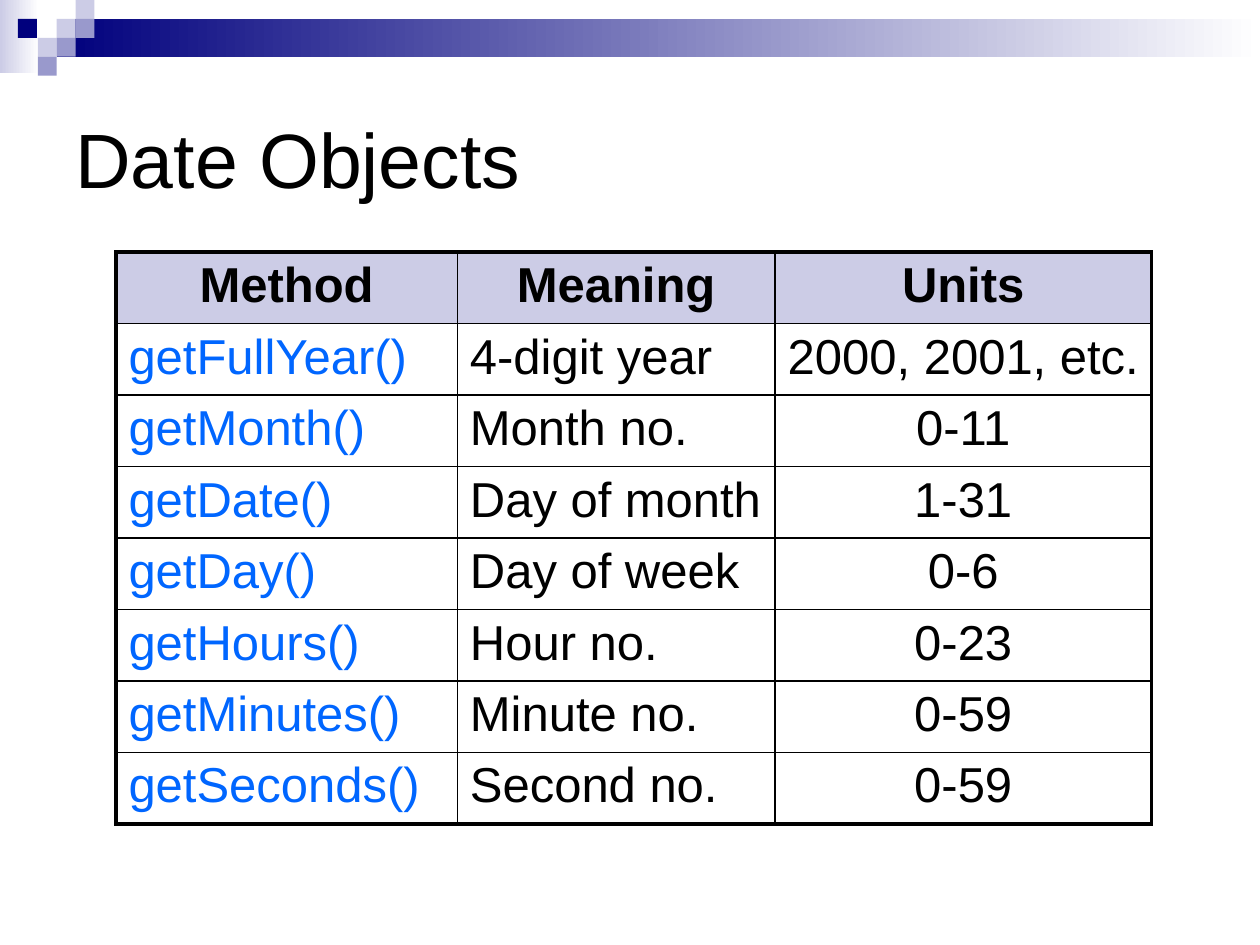
import pptx
import pptx.dml.color
import pptx.enum.shapes
import pptx.enum.text
import pptx.oxml.ns
import pptx.util
from lxml import etree

COLORS = {
    "navy": "00007D",
    "violet": "9999CC",
    "lavender": "CCCCE6",
    "white": "FFFFFF",
    "black": "000000",
    "blue": "0066FF",
}
GRID = 0.05  # inches per column and per row of the layout grid
LEFT = pptx.enum.text.PP_ALIGN.LEFT
CENTER = pptx.enum.text.PP_ALIGN.CENTER


def color(name):
    return pptx.dml.color.RGBColor.from_string(COLORS[name])


def grid(*cells):
    return [pptx.util.Inches(cell * GRID) for cell in cells]


class SlideBuilder:
    font = "Arial"
    thin, thick = 1, 2.25

    def __init__(self, deck):
        self.page = deck.slides.add_slide(deck.slide_layouts[6])

    def rectangle(self, place, fill, fade_to=None):
        shape = self.page.shapes.add_shape(
            pptx.enum.shapes.MSO_SHAPE.RECTANGLE, *grid(*place))
        shape.shadow.inherit = False
        shape.line.fill.background()
        if fade_to:
            shape.fill.gradient()
            shape.fill.gradient_angle = 0
            for stop, name in zip(shape.fill.gradient_stops, (fill, fade_to)):
                stop.color.rgb = color(name)
        else:
            shape.fill.solid()
            shape.fill.fore_color.rgb = color(fill)

    def add_text(self, frame, text, size, name="black", align=LEFT, bold=False):
        para = frame.paragraphs[0]
        para.alignment = align
        span = para.add_run()
        span.text = text
        formats = {"name": self.font, "size": pptx.util.Pt(size), "bold": bold}
        for key, value in formats.items():
            setattr(span.font, key, value)
        span.font.color.rgb = color(name)

    def title(self, place, text, size):
        frame = self.page.shapes.add_textbox(*grid(*place)).text_frame
        frame.word_wrap = True
        frame.vertical_anchor = pptx.enum.text.MSO_ANCHOR.MIDDLE
        self.add_text(frame, text, size)

    def borders(self, cell, outer):
        properties = cell._tc.get_or_add_tcPr()
        for side in ("L", "R", "T", "B"):
            width = self.thick if outer[side] else self.thin
            line = etree.SubElement(properties, pptx.oxml.ns.qn("a:ln" + side),
                                    w=str(pptx.util.Pt(width)))
            fill = etree.SubElement(line, pptx.oxml.ns.qn("a:solidFill"))
            etree.SubElement(fill, pptx.oxml.ns.qn("a:srgbClr"), val=COLORS["black"])

    def table(self, left, top, widths, row_height, rows, styles, size):
        last_row, last_column = len(rows) - 1, len(widths) - 1
        table = self.page.shapes.add_table(
            len(rows), len(widths),
            *grid(left, top, sum(widths), row_height * len(rows))).table
        table.first_row = table.horz_banding = False
        for column, width in zip(table.columns, grid(*widths)):
            column.width = width
        for r, texts in enumerate(rows):
            table.rows[r].height = grid(row_height)[0]
            for c, text in enumerate(texts):
                cell = table.cell(r, c)
                self.borders(cell, {"L": c == 0, "R": c == last_column,
                                    "T": r == 0, "B": r == last_row})
                if r == 0:
                    cell.fill.solid()
                    cell.fill.fore_color.rgb = color("lavender")
                    style = {"align": CENTER, "bold": True}
                else:
                    cell.fill.background()
                    style = styles[c]
                self.add_text(cell.text_frame, text, size, **style)


def main():
    deck = pptx.Presentation()
    deck.slide_width, deck.slide_height = grid(200, 150)
    slide = SlideBuilder(deck)

    # Fading bands along the top
    slide.rectangle((0, 0, 6.2, 11.6), "lavender", fade_to="white")
    slide.rectangle((9, 3, 191, 6), "navy", fade_to="white")

    # Mosaic of small squares
    tile = 3
    for column, row, fill in [
        (3, 1, "lavender"), (4, 0, "lavender"), (4, 1, "violet"),
        (2, 2, "lavender"), (0.95, 1, "navy"), (3, 2, "violet"),
        (2, 3, "violet"),
    ]:
        slide.rectangle((column * tile, row * tile, tile, tile), fill)

    # Title
    slide.title((10, 10, 180, 30), "Date Objects", 44)

    # Table of date methods
    rows = [
        ("Method", "Meaning", "Units"),
        ("getFullYear()", "4-digit year", "2000, 2001, etc."),
        ("getMonth()", "Month no.", "0-11"),
        ("getDate()", "Day of month", "1-31"),
        ("getDay()", "Day of week", "0-6"),
        ("getHours()", "Hour no.", "0-23"),
        ("getMinutes()", "Minute no.", "0-59"),
        ("getSeconds()", "Second no.", "0-59"),
    ]
    styles = [{"name": "blue"}, {}, {"align": CENTER}]
    slide.table(18.4, 40, (54.2, 50.4, 59.8), 11.11, rows, styles, 28)

    deck.save("out.pptx")


if __name__ == "__main__":
    main()
